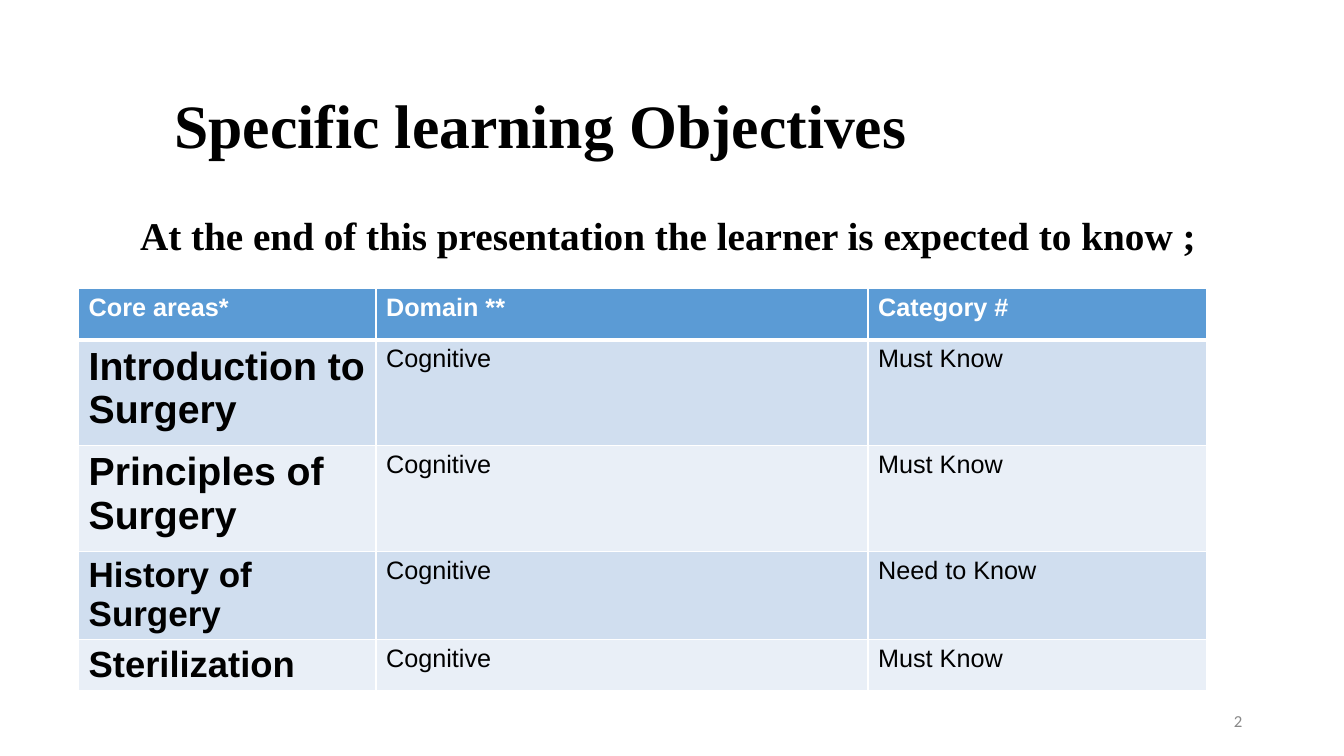
from lxml.etree import SubElement
from pptx import Presentation
from pptx.dml.color import RGBColor
from pptx.enum.text import MSO_ANCHOR, MSO_AUTO_SIZE, PP_ALIGN
from pptx.oxml.ns import qn
from pptx.util import Inches, Pt

BLACK = RGBColor(0x00, 0x00, 0x00)
WHITE = RGBColor(0xFF, 0xFF, 0xFF)
GREY = RGBColor(0x88, 0x88, 0x88)
HEADER_BLUE = RGBColor(0x5B, 0x9B, 0xD5)
BANDS = RGBColor(0xE9, 0xEF, 0xF7), RGBColor(0xD0, 0xDE, 0xEF)

SERIF, SANS, NUMBER_FONT = "Times New Roman", "Arial", "Calibri"
COLUMNS = 2.95, 4.88, 3.36
ROWS = 0.51, 1.05, 1.05, 0.87, 0.51
HEADINGS = "Core areas*", "Domain **", "Category #"
OBJECTIVES = [
    ("Introduction to Surgery", 28, "Must Know"),
    ("Principles of Surgery", 28, "Must Know"),
    ("History of Surgery", 25, "Need to Know"),
    ("Sterilization", 26, "Must Know"),
]


def add_run(p, text, size, font, color=BLACK, bold=False):
    r = p.add_run()
    r.text = text
    r.font.size = Pt(size)
    r.font.name = font
    r.font.bold = bold
    r.font.color.rgb = color


def add_title(s, text):
    sp = s.shapes.title
    sp.left, sp.top, sp.width, sp.height = map(Inches, (1.63, 0.67, 10.13, 1.21))
    tf = sp.text_frame
    tf.word_wrap = True
    tf.auto_size = MSO_AUTO_SIZE.NONE
    tf.vertical_anchor = MSO_ANCHOR.MIDDLE
    p = tf.paragraphs[0]
    p.alignment = PP_ALIGN.LEFT
    p.line_spacing = 0.9
    add_run(p, text, 44, SERIF, bold=True)


def add_text(s, box, text, size, font, color=BLACK, bold=False,
             align=PP_ALIGN.LEFT, anchor=MSO_ANCHOR.TOP):
    tf = s.shapes.add_textbox(*map(Inches, box)).text_frame
    tf.word_wrap = True
    tf.vertical_anchor = anchor
    p = tf.paragraphs[0]
    p.alignment = align
    add_run(p, text, size, font, color, bold)


def set_borders(cell, bottom, top):
    """Draw white cell borders, with widths in points above and below."""
    tc_pr = cell._tc.get_or_add_tcPr()
    for side, width in (("L", 1), ("R", 1), ("T", top), ("B", bottom)):
        ln = SubElement(tc_pr, qn(f"a:ln{side}"), w=str(Pt(width)))
        fill = SubElement(ln, qn("a:solidFill"))
        SubElement(fill, qn("a:srgbClr"), val=str(WHITE))


def fill_row(table, row, texts, sizes, bolds, color, fill):
    for col, (text, size, bold) in enumerate(zip(texts, sizes, bolds)):
        cell = table.cell(row, col)
        set_borders(cell, bottom=3 if row == 0 else 1, top=3 if row == 1 else 1)
        cell.fill.solid()
        cell.fill.fore_color.rgb = fill
        add_run(cell.text_frame.paragraphs[0], text, size, SANS, color, bold)


def add_objectives_table(s):
    frame = s.shapes.add_table(len(ROWS), len(COLUMNS), Inches(0.78), Inches(2.86),
                               Inches(sum(COLUMNS)), Inches(sum(ROWS)))
    table = frame.table
    for column, width in zip(table.columns, COLUMNS):
        column.width = Inches(width)
    for row, height in zip(table.rows, ROWS):
        row.height = Inches(height)
    fill_row(table, 0, HEADINGS, (18, 18, 18), (True, True, True), WHITE, HEADER_BLUE)
    for row, (area, size, category) in enumerate(OBJECTIVES, start=1):
        fill_row(table, row, (area, "Cognitive", category), (size, 18, 18),
                 (True, False, False), BLACK, BANDS[row % 2])


def main():
    prs = Presentation()
    prs.slide_width, prs.slide_height = Inches(13.33), Inches(7.5)
    s = prs.slides.add_slide(prs.slide_layouts.get_by_name("Title Only"))
    add_title(s, "Specific learning Objectives")
    add_objectives_table(s)
    add_text(s, (1.29, 2.05, 10.71, 0.57),
             "At the end of this presentation the learner is expected to know ;",
             28, SERIF, bold=True)
    add_text(s, (9.42, 6.95, 3, 0.4), "2", 12, NUMBER_FONT, GREY,
             align=PP_ALIGN.RIGHT, anchor=MSO_ANCHOR.MIDDLE)
    prs.save("out.pptx")


if __name__ == "__main__":
    main()
